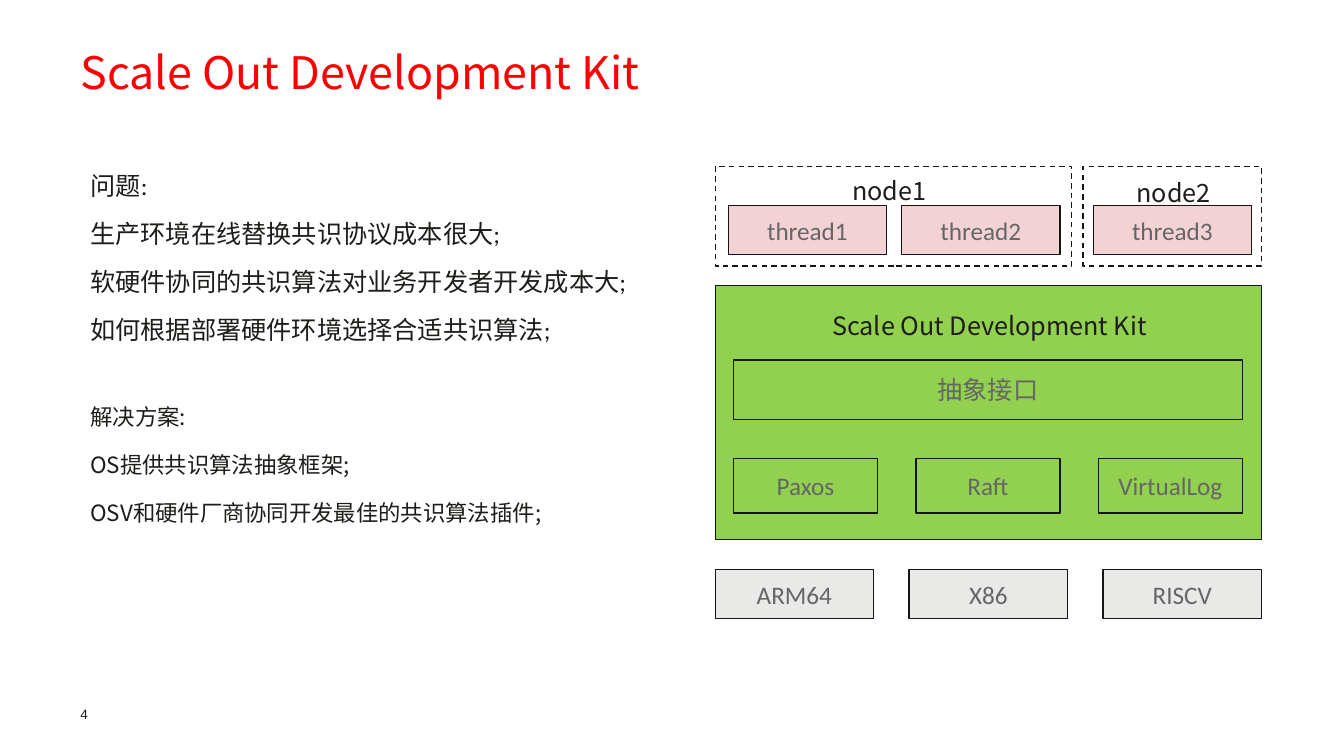
from dataclasses import dataclass

from pptx import Presentation
from pptx.dml.color import RGBColor
from pptx.enum.dml import MSO_LINE
from pptx.enum.shapes import MSO_SHAPE
from pptx.enum.text import MSO_ANCHOR, PP_ALIGN
from pptx.util import Cm, Pt

RECTANGLE = MSO_SHAPE.RECTANGLE
DASH = MSO_LINE.DASH
MIDDLE = MSO_ANCHOR.MIDDLE
CENTER = PP_ALIGN.CENTER

NOTO = "Noto Sans CJK SC"
CALIBRI = "Calibri"
INK, OUTLINE, GREY_TEXT, RED = "1D1D1A", "151515", "666666", "FF0000"
GREEN, PINK, PALE_GREY = "92D050", "F3D2D5", "E9E9E7"


@dataclass(frozen=True)
class Box:
    """A bordered rectangle, lengths in centimetres."""
    left: float
    top: float
    width: float
    height: float
    fill: str = ""
    label: str = ""


@dataclass(frozen=True)
class Caption:
    """A block of text, one paragraph per line, lengths in centimetres."""
    left: float
    top: float
    width: float
    height: float
    lines: tuple[str, ...]
    size: float = 18
    font: str = NOTO
    color: str = INK
    spacing: float | None = 34.4
    inset: bool = True
    wrap: bool = True


def rgb(color: str) -> RGBColor:
    return RGBColor.from_string(color)


def write(paragraph, text: str, font: str, size: float, color: str) -> None:
    run = paragraph.add_run()
    run.text = text
    for attribute, value in {"name": font, "size": Pt(size)}.items():
        setattr(run.font, attribute, value)
    run.font.color.rgb = rgb(color)


def draw_box(slide, box: Box) -> None:
    shape = slide.shapes.add_shape(
        RECTANGLE, Cm(box.left), Cm(box.top), Cm(box.width), Cm(box.height))
    shape.shadow.inherit = False
    shape.line.color.rgb = rgb(OUTLINE)
    shape.line.width = Pt(1)
    if box.fill:
        shape.fill.solid()
        shape.fill.fore_color.rgb = rgb(box.fill)
    else:
        shape.fill.background()
        shape.line.dash_style = DASH
    if box.label:
        frame = shape.text_frame
        frame.vertical_anchor = MIDDLE
        frame.paragraphs[0].alignment = CENTER
        write(frame.paragraphs[0], box.label, CALIBRI, 18, GREY_TEXT)


def draw_caption(slide, caption: Caption) -> None:
    frame = slide.shapes.add_textbox(
        Cm(caption.left), Cm(caption.top),
        Cm(caption.width), Cm(caption.height)).text_frame
    frame.word_wrap = caption.wrap
    if not caption.inset:
        for side in ("left", "top", "right", "bottom"):
            setattr(frame, f"margin_{side}", 0)
    for index, line in enumerate(caption.lines):
        paragraph = frame.add_paragraph() if index else frame.paragraphs[0]
        if caption.spacing:
            paragraph.line_spacing = Pt(caption.spacing)
        write(paragraph, line, caption.font, caption.size, caption.color)


def row(labels: tuple[str, ...], left: float, pitch: float, top: float,
        width: float, height: float, fill: str) -> list[Box]:
    """Equally spaced boxes, one per label."""
    return [Box(left + i * pitch, top, width, height, fill, label)
            for i, label in enumerate(labels)]


TEXT_LEFT = 2.03
DIAGRAM_LEFT = 18.03
KIT_INNER_LEFT = 18.49

HEADINGS = (
    Caption(TEXT_LEFT, 17.78, 1.4, 0.41, ("4",), 9.7, "Arial", "1D1D1B",
            None, inset=False),
    Caption(TEXT_LEFT, 1.27, 29.85, 2.77, ("Scale Out Development Kit",), 32,
            color=RED, spacing=34.3, inset=False),
)
PROBLEM = Caption(TEXT_LEFT, 3.71, 14.15, 5.11, (
    "问题:",
    "生产环境在线替换共识协议成本很大;",
    "软硬件协同的共识算法对业务开发者开发成本大;",
    "如何根据部署硬件环境选择合适共识算法;",
), font=CALIBRI)
SOLUTION = Caption(TEXT_LEFT, 9.5, 14.15, 3.89, (
    "解决方案:",
    "OS提供共识算法抽象框架;",
    "OSV和硬件厂商协同开发最佳的共识算法插件;",
), size=16)

KIT = Box(DIAGRAM_LEFT, 7.19, 13.77, 6.4, GREEN)
INTERFACE = Box(KIT_INNER_LEFT, 9.07, 12.83, 1.5, GREEN, "抽象接口")
PLUGINS = row(("Paxos", "Raft", "VirtualLog"),
              KIT_INNER_LEFT, 4.6, 11.56, 3.63, 1.37, GREEN)
PROCESSORS = row(("ARM64", "X86", "RISCV"),
                 DIAGRAM_LEFT, 4.89, 14.35, 3.99, 1.24, PALE_GREY)
THREADS = (row(("thread1", "thread2"), 18.36, 4.37, 5.18, 3.99, 1.24, PINK)
           + row(("thread3",), 27.56, 0, 5.18, 3.99, 1.24, PINK))
NODES = (Box(DIAGRAM_LEFT, 4.19, 8.99, 2.51), Box(27.3, 4.19, 4.5, 2.51))
DIAGRAM_LABELS = (
    Caption(20.73, 7.24, 8.79, 1.32, ("Scale Out Development Kit",), wrap=False),
    Caption(21.23, 3.84, 2.46, 1.47, ("node1",), wrap=False),
    Caption(28.4, 3.89, 2.46, 1.47, ("node2",), wrap=False),
)


def main() -> None:
    presentation = Presentation()
    presentation.slide_width = Cm(33.88)
    presentation.slide_height = Cm(19.05)
    slide = presentation.slides.add_slide(presentation.slide_layouts[6])

    # Title, page number and text column
    for caption in (*HEADINGS, PROBLEM, SOLUTION):
        draw_caption(slide, caption)

    # Architecture diagram, then its labels on top
    for box in (KIT, INTERFACE, *PLUGINS, *PROCESSORS, *THREADS, *NODES):
        draw_box(slide, box)
    for caption in DIAGRAM_LABELS:
        draw_caption(slide, caption)

    presentation.save("out.pptx")


if __name__ == "__main__":
    main()
